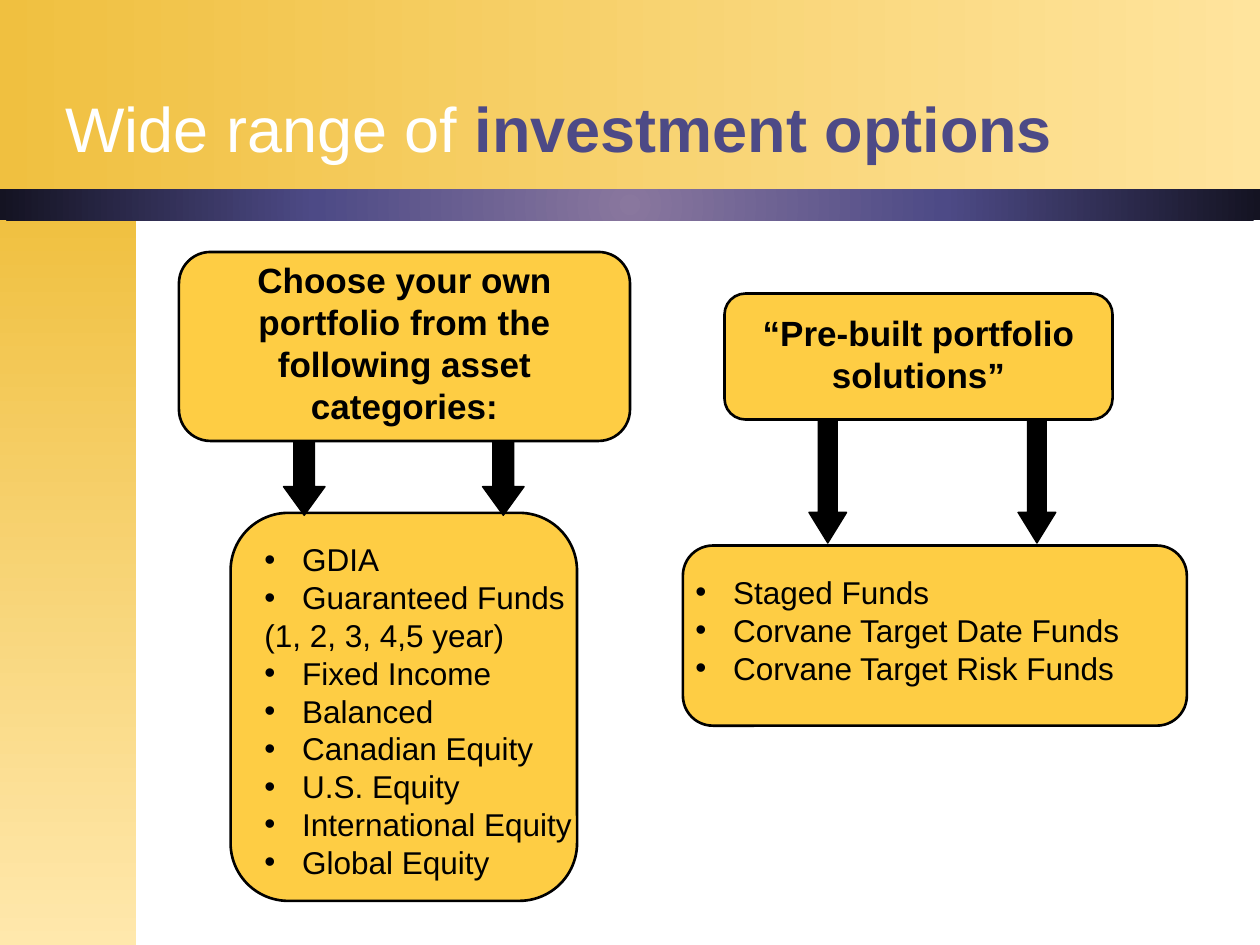
from lxml import etree
from pptx import Presentation
from pptx.dml.color import RGBColor
from pptx.enum.shapes import MSO_SHAPE
from pptx.enum.text import MSO_ANCHOR, PP_ALIGN
from pptx.oxml.ns import qn
from pptx.util import Inches, Pt

RECT = MSO_SHAPE.RECTANGLE
CARD = MSO_SHAPE.FLOWCHART_ALTERNATE_PROCESS
ARROW = MSO_SHAPE.DOWN_ARROW
LEFT, CENTER = PP_ALIGN.LEFT, PP_ALIGN.CENTER
TOP, BOTTOM = MSO_ANCHOR.TOP, MSO_ANCHOR.BOTTOM
GOLD, PURPLE, BLACK, WHITE = "FECD44", "4D4A86", "000000", "FFFFFF"
HEAD = {"size": Pt(20), "bold": True}
ITEM = {"size": Pt(18), "bold": False}

# Boxes inside a column are left, top, width, height from its corner.
OWN = {
    "card": (0, 0, 3.58, 1.5),
    "label": (0.25, 0, 3.08, 1.43),
    "head": "Choose your own portfolio from the following asset categories:",
    "panel": (0.41, 2.07, 2.75, 3.08),
    "list": (0.58, 2.24, 2.67, 2.8),
    "items": ["GDIA", "Guaranteed Funds", "(1, 2, 3, 4,5 year)",
              "Fixed Income", "Balanced", "Canadian Equity", "U.S. Equity",
              "International Equity", "Global Equity"],
    "arrows": [(x, 1.17, 0.33, 0.92) for x in (0.83, 2.41)],
    "tip": 0.69,
}
BUILT = {
    "card": (0.33, 0, 3.08, 1),
    "label": (0.33, 0.09, 3.08, 0.77),
    "head": "“Pre-built portfolio solutions”",
    "panel": (0, 2, 4, 1.43),
    "list": (0, 2.17, 4, 1),
    "items": ["Staged Funds", "Corvane Target Date Funds",
              "Corvane Target Risk Funds"],
    "arrows": [(x, 1, 0.3, 0.98) for x in (1, 2.66)],
    "tip": 0.81,
}


def color(code):
    return RGBColor.from_string(code)


def add_shape(slide, kind, box, fill=None, line=None):
    shape = slide.shapes.add_shape(kind, *map(Inches, box))
    shape.shadow.inherit = False
    if fill:
        shape.fill.solid()
        shape.fill.fore_color.rgb = color(fill)
    if line:
        shape.line.color.rgb = color(BLACK)
        shape.line.width = Pt(line)
    else:
        shape.line.fill.background()
    return shape


def add_blend(slide, box, stops, angle=None):
    """Rectangle with a linear gradient, or a circular one without an angle."""
    shape = add_shape(slide, RECT, box)
    shape.fill.gradient()
    grad = shape.fill._fill._gradFill
    for child in list(grad):
        grad.remove(child)
    steps = etree.SubElement(grad, qn("a:gsLst"))
    for i, code in enumerate(stops):
        place = str(100000 * i // (len(stops) - 1))
        stop = etree.SubElement(steps, qn("a:gs"), pos=place)
        etree.SubElement(stop, qn("a:srgbClr"), val=code)
    if angle is None:
        way = etree.SubElement(grad, qn("a:path"), path="circle")
        sides = dict.fromkeys("ltrb", "50000")
        etree.SubElement(way, qn("a:fillToRect"), **sides)
    else:
        etree.SubElement(grad, qn("a:lin"), ang=str(angle * 60000), scaled="0")


def add_frame(slide, box, anchor=TOP):
    frame = slide.shapes.add_textbox(*map(Inches, box)).text_frame
    frame.word_wrap = True
    frame.vertical_anchor = anchor
    return frame


def add_run(para, text, style, code=BLACK):
    run = para.add_run()
    run.text = text
    run.font.name = "Arial"
    run.font.color.rgb = color(code)
    for name, value in style.items():
        setattr(run.font, name, value)


def add_bullet(para):
    props = para._p.get_or_add_pPr()
    props.set("marL", str(Inches(0.3)))
    props.set("indent", str(-Inches(0.3)))
    etree.SubElement(props, qn("a:buFont"), typeface="Arial")
    etree.SubElement(props, qn("a:buChar"), char="•")


def add_list(slide, box, items):
    frame = add_frame(slide, box)
    for i, text in enumerate(items):
        para = frame.add_paragraph() if i else frame.paragraphs[0]
        para.alignment = LEFT
        if not text.startswith("("):
            add_bullet(para)
        add_run(para, text, ITEM)


def add_column(slide, left, top, part):
    """Heading card with arrows down to a panel of options."""
    def place(box):
        x, y, wide, high = box
        return left + x, top + y, wide, high

    add_shape(slide, CARD, place(part["panel"]), GOLD, 1.5)
    add_list(slide, place(part["list"]), part["items"])
    for box in part["arrows"]:
        arrow = add_shape(slide, ARROW, place(box), BLACK, 0.75)
        arrow.adjustments[1] = part["tip"]
    add_shape(slide, CARD, place(part["card"]), GOLD, 1.5)
    para = add_frame(slide, place(part["label"])).paragraphs[0]
    para.alignment = CENTER
    add_run(para, part["head"], HEAD)


def add_bands(slide):
    add_blend(slide, (0, 0, 10, 1.5), ["F0C040", "FFE49D"], 0)
    add_blend(slide, (0, 1.67, 1.08, 5.83), ["F0C040", "FFE8AC"], 90)
    add_blend(slide, (0, 1.5, 10, 0.25), ["89779E", PURPLE, "141322"])


def add_title(slide, box):
    para = add_frame(slide, box, BOTTOM).paragraphs[0]
    add_run(para, "Wide range of ", {"size": Pt(36)}, WHITE)
    add_run(para, "investment options", {"size": Pt(36), "bold": True}, PURPLE)


def main():
    deck = Presentation()
    deck.slide_width, deck.slide_height = Inches(10), Inches(7.5)
    slide = deck.slides.add_slide(deck.slide_layouts[6])
    add_bands(slide)
    add_title(slide, (0.42, 0, 8.5, 1.36))
    add_column(slide, 1.42, 2, OWN)
    add_column(slide, 5.42, 2.33, BUILT)
    deck.save("out.pptx")


if __name__ == "__main__":
    main()
